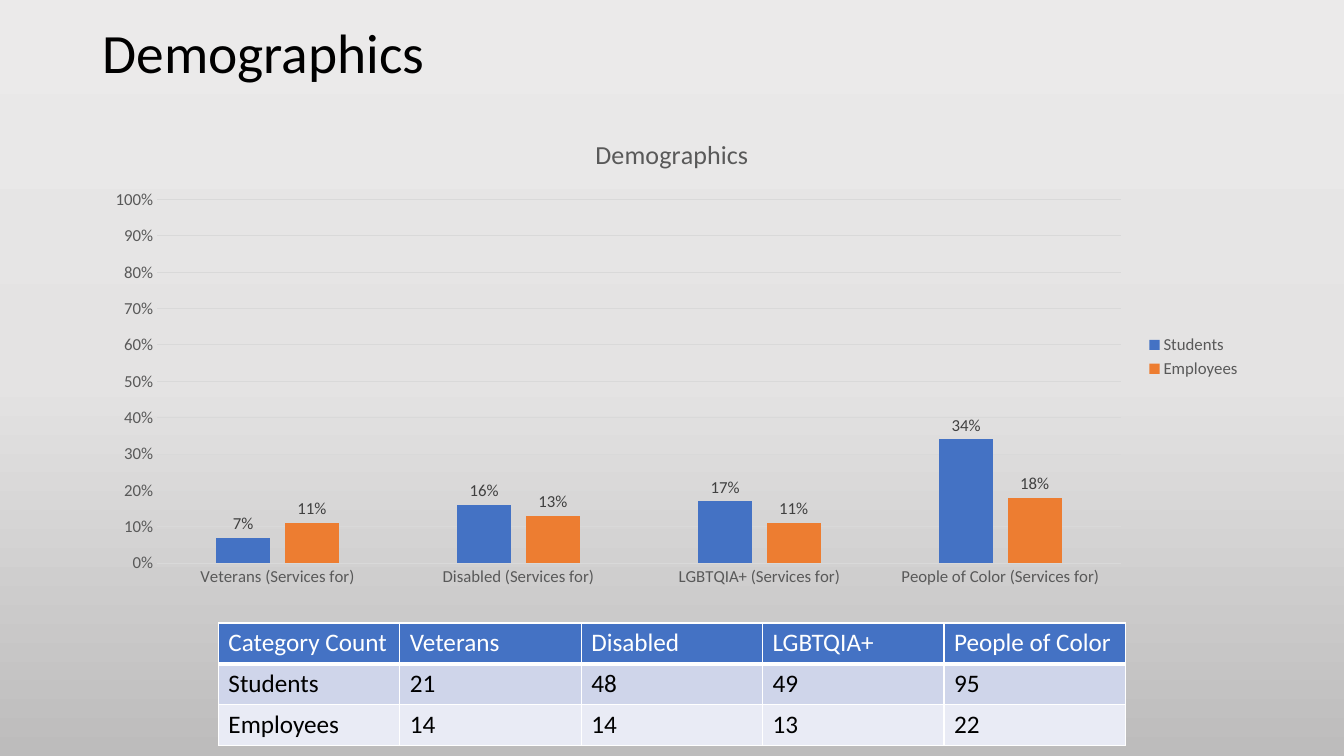
from copy import deepcopy
from dataclasses import dataclass

from lxml.etree import SubElement as Sub
from pptx import Presentation
from pptx.chart.data import CategoryChartData as Data
from pptx.dml.color import RGBColor as Rgb
from pptx.enum.chart import XL_CHART_TYPE as Kind
from pptx.enum.chart import XL_LABEL_POSITION as Spot
from pptx.enum.chart import XL_LEGEND_POSITION as Side
from pptx.enum.chart import XL_TICK_MARK as Tick
from pptx.enum.text import MSO_ANCHOR as Anchor
from pptx.enum.text import MSO_AUTO_SIZE as Fit
from pptx.enum.text import PP_ALIGN as Align
from pptx.oxml.ns import qn
from pptx.util import Inches, Pt


@dataclass(frozen=True)
class Theme:
    face: str = "Calibri"
    black: str = "000000"
    white: str = "FFFFFF"
    grey: str = "595959"
    label: str = "404040"
    rule: str = "D9D9D9"
    head: str = "4472C4"
    bands: tuple = ("CFD5EA", "E9EBF5")
    bars: tuple = ("4472C4", "ED7D31")
    back: tuple = ("EBEAEA", "E4E3E3", "BDBCBC")
    title: float = 39.6
    chart: float = 18.6
    table: float = 18
    small: float = 12


class Page:
    cols, rows = 160, 90

    def __init__(self, deck, theme):
        self.theme = theme
        self.wide, self.high = deck.slide_width, deck.slide_height
        self.slide = deck.slides.add_slide(deck.slide_layouts[5])

    def box(self, col, row, wide, high):
        x, y = self.wide / self.cols, self.high / self.rows
        return [round(n) for n in (col * x, row * y, wide * x, high * y)]

    def style(self, font, size, color):
        font.name, font.size, font.bold = self.theme.face, Pt(size), False
        font.color.rgb = Rgb.from_string(color)

    def text(self, para, words, size, color):
        run = para.add_run()
        run.text = words
        self.style(run.font, size, color)

    def paint(self, fill, color):
        fill.solid()
        fill.fore_color.rgb = Rgb.from_string(color)

    def rule(self, line):
        line.width = Pt(0.75)
        line.color.rgb = Rgb.from_string(self.theme.rule)

    def back(self):
        fill = self.slide.background.fill
        fill.gradient()
        fill.gradient_angle = 270
        stops = self.slide.element.xpath(".//a:gsLst")[0]
        stops.insert(1, deepcopy(stops[0]))
        last = len(self.theme.back) - 1
        for i, (stop, color) in enumerate(zip(fill.gradient_stops, self.theme.back)):
            stop.color.rgb = Rgb.from_string(color)
            stop.position = i / last

    def title(self, words, *area):
        shape = self.slide.shapes.title
        shape.left, shape.top, shape.width, shape.height = self.box(*area)
        frame = shape.text_frame
        frame.auto_size = Fit.NONE
        frame.vertical_anchor = Anchor.MIDDLE
        para = frame.paragraphs[0]
        para.alignment, para.line_spacing = Align.LEFT, 0.9
        self.text(para, words, self.theme.title, self.theme.black)

    def chart(self, name, cats, series, *area):
        look = self.theme
        data = Data(number_format="0%")
        data.categories = cats
        for label, vals in series.items():
            data.add_series(label, vals)
        frame = self.slide.shapes.add_chart(
            Kind.COLUMN_CLUSTERED, *self.box(*area), data)
        chart = frame.chart
        self.style(chart.font, look.small, look.grey)
        chart.has_title = True
        self.text(chart.chart_title.text_frame.paragraphs[0],
                  name, look.chart, look.grey)
        chart.chart_title.include_in_layout = False
        chart.has_legend = True
        chart.legend.position = Side.RIGHT
        chart.legend.include_in_layout = False
        self.style(chart.legend.font, look.small, look.grey)
        for axis in (chart.category_axis, chart.value_axis):
            axis.major_tick_mark = axis.minor_tick_mark = Tick.NONE
            self.style(axis.tick_labels.font, look.small, look.grey)
        self.rule(chart.category_axis.format.line)
        axis = chart.value_axis
        axis.minimum_scale, axis.maximum_scale, axis.major_unit = 0, 1, 0.1
        axis.format.line.fill.background()
        axis.tick_labels.number_format = "0%"
        axis.tick_labels.number_format_is_linked = False
        self.rule(axis.major_gridlines.format.line)
        plot = chart.plots[0]
        plot.gap_width, plot.overlap, plot.vary_by_categories = 219, -27, False
        for bar, color in zip(plot.series, look.bars):
            self.paint(bar.format.fill, color)
            bar.invert_if_negative = False
            tags = bar.data_labels
            tags.show_value, tags.position = True, Spot.OUTSIDE_END
            tags.number_format, tags.number_format_is_linked = "0%", False
            self.style(tags.font, look.small, look.label)

    def edge(self, cell, side, width):
        line = Sub(cell._tc.get_or_add_tcPr(), qn("a:ln" + side), w=str(Pt(width)))
        fill = Sub(line, qn("a:solidFill"))
        Sub(fill, qn("a:srgbClr"), val=self.theme.white)

    def table(self, rows, *area):
        look = self.theme
        frame = self.slide.shapes.add_table(
            len(rows), len(rows[0]), *self.box(*area))
        for i, row in enumerate(rows):
            ink = look.black if i else look.white
            tint = look.bands[(i - 1) % 2] if i else look.head
            for j, words in enumerate(row):
                cell = frame.table.cell(i, j)
                for side in "LRTB":
                    self.edge(cell, side, 3 if i == 0 and side == "B" else 1)
                self.paint(cell.fill, tint)
                self.text(cell.text_frame.paragraphs[0], words, look.table, ink)


def main():
    deck = Presentation()
    deck.slide_width, deck.slide_height = Inches(13.333), Inches(7.5)
    page = Page(deck, Theme())
    groups = ["Veterans", "Disabled", "LGBTQIA+", "People of Color"]
    page.back()
    page.title("Demographics", 11, 2.64, 138, 8)
    page.chart("Demographics", [f"{group} (Services for)" for group in groups],
               {"Students": (0.07, 0.16, 0.17, 0.34),
                "Employees": (0.11, 0.13, 0.11, 0.18)},
               11, 13.92, 138, 57.12)
    page.table([["Category Count", *groups],
                ["Students", "21", "48", "49", "95"],
                ["Employees", "14", "14", "13", "22"]],
               26, 74.16, 108, 14.56)
    deck.save("out.pptx")


if __name__ == "__main__":
    main()
